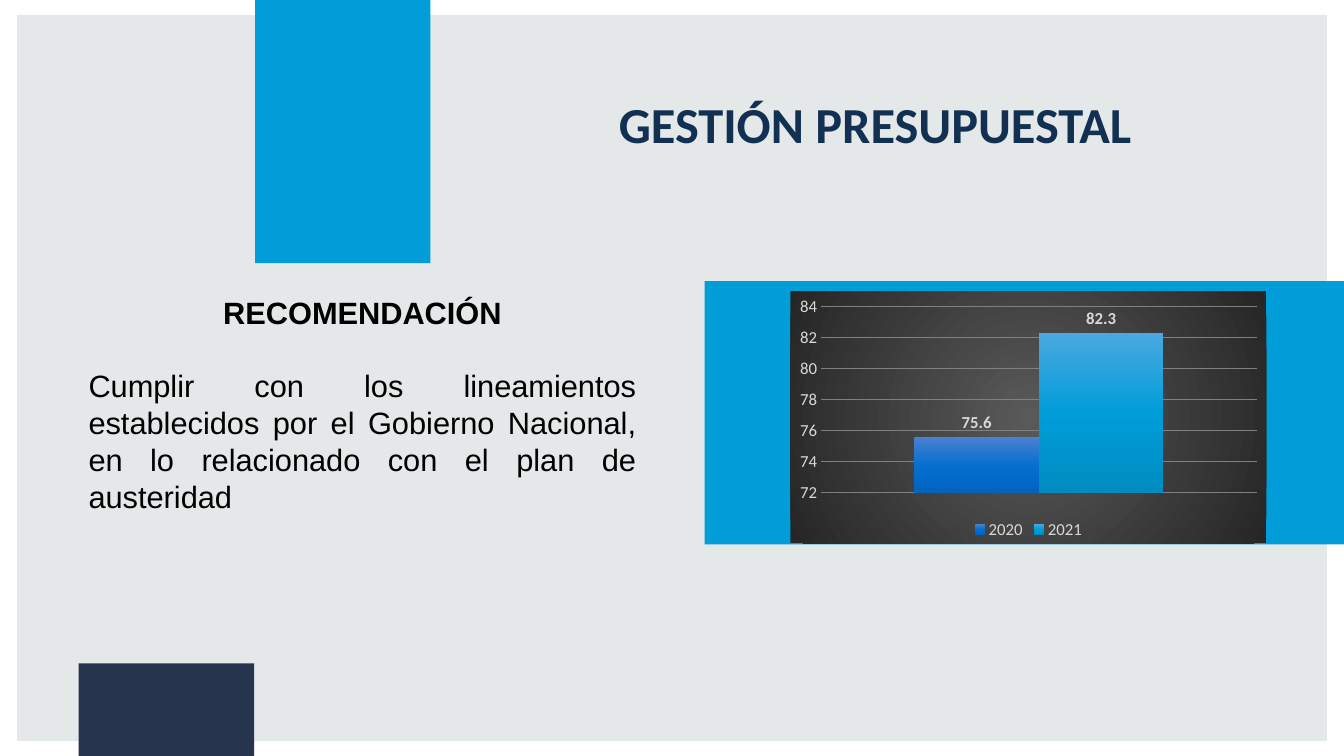
from lxml import etree
from pptx import Presentation
from pptx.chart.data import CategoryChartData
from pptx.dml.color import RGBColor
from pptx.enum.chart import XL_CHART_TYPE, XL_LABEL_POSITION, XL_LEGEND_POSITION, XL_TICK_MARK
from pptx.enum.shapes import MSO_SHAPE
from pptx.enum.text import MSO_ANCHOR, PP_ALIGN
from pptx.oxml import parse_xml
from pptx.oxml.ns import nsdecls, qn
from pptx.util import Inches, Pt

RECTANGLE = MSO_SHAPE.RECTANGLE
COLUMNS = XL_CHART_TYPE.COLUMN_CLUSTERED
LABEL_ABOVE = XL_LABEL_POSITION.OUTSIDE_END
LEGEND_BELOW = XL_LEGEND_POSITION.BOTTOM
NO_TICK = XL_TICK_MARK.NONE
TOP, BOTTOM = MSO_ANCHOR.TOP, MSO_ANCHOR.BOTTOM
CENTER, JUSTIFY = PP_ALIGN.CENTER, PP_ALIGN.JUSTIFY


def color(value):
    return RGBColor.from_string(value)


def gradient(stops, direction):
    marks = "".join(
        f'<a:gs pos="{position * 1000}"><a:srgbClr val="{value}"/></a:gs>'
        for position, value in stops
    )
    return parse_xml(
        f'<a:gradFill {nsdecls("a")} rotWithShape="1">'
        f"<a:gsLst>{marks}</a:gsLst>{direction}</a:gradFill>"
    )


class SlideBuilder:
    """Draws styled elements on the current slide."""

    HEADING_FONT = "Calibri"
    BODY_FONT = "Arial"
    CHART_TEXT = "D9D9D9"
    GRID = "808080"
    DOWNWARD = '<a:lin ang="5400000" scaled="0"/>'
    FROM_CENTER = (
        '<a:path path="circle">'
        '<a:fillToRect l="50000" t="50000" r="50000" b="50000"/></a:path>'
    )

    def __init__(self, page):
        self.page = page

    def block(self, left, top, width, height, fill):
        shape = self.page.shapes.add_shape(
            RECTANGLE, Inches(left), Inches(top), Inches(width), Inches(height)
        )
        shape.shadow.inherit = False
        shape.fill.solid()
        shape.fill.fore_color.rgb = color(fill)
        shape.line.fill.background()

    def text_box(self, left, top, width, height, anchor=TOP):
        box = self.page.shapes.add_textbox(
            Inches(left), Inches(top), Inches(width), Inches(height)
        )
        box.text_frame.word_wrap = True
        box.text_frame.vertical_anchor = anchor
        return box.text_frame

    def style(self, font, size, name, fill, bold=False):
        font.size = Pt(size)
        font.name = name
        font.bold = bold
        font.color.rgb = color(fill)

    def paragraph(self, para, text, size, name, fill, align, bold=False):
        para.text = text
        para.alignment = align
        self.style(para.font, size, name, fill, bold)

    def column_chart(self, left, top, width, height, category, columns, background):
        data = CategoryChartData(number_format="0.0")
        data.categories = [category]
        for name, value, _ in columns:
            data.add_series(name, [value])
        chart = self.page.shapes.add_chart(
            COLUMNS, Inches(left), Inches(top), Inches(width), Inches(height), data
        ).chart
        chart.has_title = False
        self.style(chart.font, 12, self.HEADING_FONT, self.CHART_TEXT)
        chart.has_legend = True
        chart.legend.position = LEGEND_BELOW
        chart.legend.include_in_layout = False
        self.style(chart.legend.font, 12, self.HEADING_FONT, self.CHART_TEXT)
        chart.category_axis.visible = False

        axis = chart.value_axis
        axis.minimum_scale, axis.maximum_scale, axis.major_unit = 72, 84, 2
        axis.major_tick_mark = axis.minor_tick_mark = NO_TICK
        axis.format.line.fill.background()
        axis.major_gridlines.format.line.color.rgb = color(self.GRID)
        axis.major_gridlines.format.line.width = Pt(0.75)
        axis.tick_labels.number_format = "General"
        axis.tick_labels.number_format_is_linked = False
        self.style(axis.tick_labels.font, 12, self.HEADING_FONT, self.CHART_TEXT)

        plot = chart.plots[0]
        plot.gap_width, plot.overlap, plot.vary_by_categories = 150, 0, False
        for series, (_, _, stops) in zip(plot.series, columns):
            series.invert_if_negative = False
            series._element.get_or_add_spPr().append(gradient(stops, self.DOWNWARD))
            labels = series.data_labels
            labels.show_value = True
            labels.number_format = "0.0"
            labels.number_format_is_linked = False
            labels.position = LABEL_ABOVE
            self.style(labels.font, 12, self.HEADING_FONT, self.CHART_TEXT, True)

        properties = etree.Element(qn("c:spPr"))
        properties.append(gradient(background, self.FROM_CENTER))
        border = etree.SubElement(properties, qn("a:ln"))
        etree.SubElement(border, qn("a:noFill"))
        chart._chartSpace.find(qn("c:chart")).addnext(properties)


def main():
    deck = Presentation()
    deck.slide_width, deck.slide_height = Inches(13.33), Inches(7.5)
    page = deck.slides.add_slide(deck.slide_layouts[6])
    builder = SlideBuilder(page)

    builder.block(0.17, 0.15, 12.99, 7.2, "E4E8E9")
    builder.block(2.53, 0, 1.74, 2.61, "009DD9")
    builder.block(6.99, 2.79, 6.34, 2.61, "009DD9")
    builder.block(0.78, 6.58, 1.74, 0.92, "26354D")

    title = builder.text_box(4.29, 0.21, 8.78, 1.37, BOTTOM).paragraphs[0]
    builder.paragraph(
        title, "GESTIÓN PRESUPUESTAL", 36, builder.HEADING_FONT, "113052", CENTER, True
    )
    title.line_spacing = 0.9

    advice = builder.text_box(0.78, 2.86, 5.63, 2.32)
    builder.paragraph(
        advice.paragraphs[0], "RECOMENDACIÓN", 22, builder.BODY_FONT, "000000", CENTER, True
    )
    body = advice.add_paragraph()
    builder.paragraph(
        body,
        "Cumplir con los lineamientos establecidos por el Gobierno Nacional, "
        "en lo relacionado con el plan de austeridad",
        22, builder.BODY_FONT, "000000", JUSTIFY,
    )
    body.space_before = Pt(26.4)

    builder.column_chart(
        7.84, 2.89, 4.72, 2.5, "1",
        [
            ("2020", 75.6, [(0, "4C80D0"), (50, "066FCF"), (100, "0063BD")]),
            ("2021", 82.3, [(0, "4BA8E0"), (50, "009DD9"), (100, "008CC1")]),
        ],
        [(0, "595959"), (100, "262626")],
    )
    deck.save("out.pptx")


if __name__ == "__main__":
    main()
